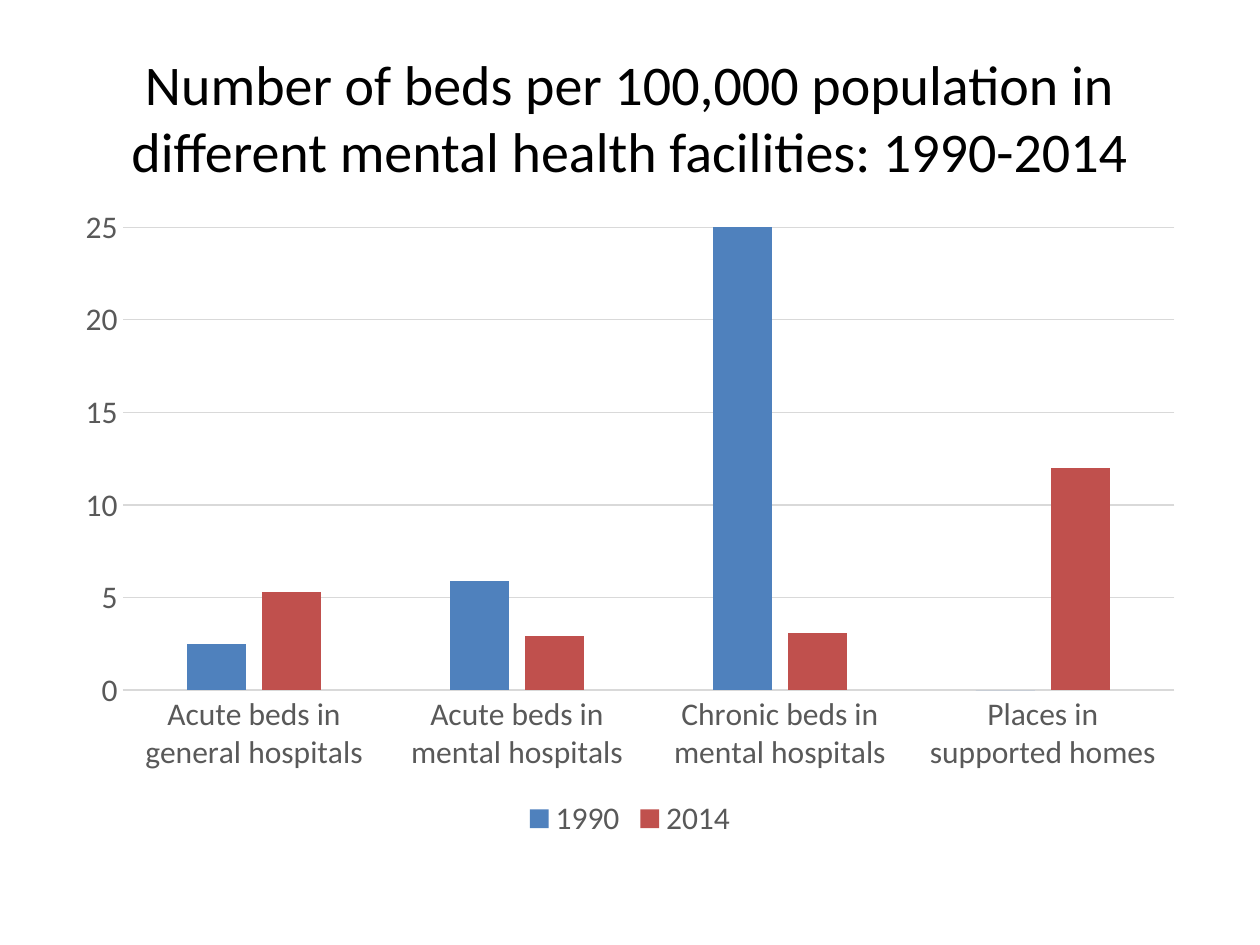
from pptx import Presentation
from pptx.chart.data import CategoryChartData
from pptx.dml.color import RGBColor
from pptx.enum.chart import XL_CHART_TYPE, XL_LEGEND_POSITION, XL_TICK_MARK
from pptx.enum.text import MSO_ANCHOR, PP_ALIGN
from pptx.util import Inches, Pt

TITLE = "Number of beds per 100,000 population in different mental health facilities: 1990-2014"
FACILITIES = ["Acute beds in general hospitals", "Acute beds in mental hospitals",
              "Chronic beds in mental hospitals", "Places in supported homes"]
BEDS = [("1990", (2.5, 5.9, 25.9, 0), "4F81BD"),
        ("2014", (5.3, 2.9, 3.1, 12), "C0504D")]
FONT, GREY, PALE = "Calibri", "595959", "D9D9D9"
W, H, MARGIN = 10, 7.5, 0.5
TITLE_TOP, TITLE_H, CHART_H = 0.3, 1.25, 5.15


def rgb(color):
    return RGBColor.from_string(color)


def style(font, size=18, color=GREY):
    font.name, font.size, font.bold = FONT, Pt(size), False
    font.color.rgb = rgb(color)


def rule(line):
    line.color.rgb = rgb(PALE)
    line.width = Pt(0.75)


def add_title(s):
    title = s.shapes.title
    title.left, title.top = Inches(MARGIN), Inches(TITLE_TOP)
    title.width, title.height = Inches(W - 2 * MARGIN), Inches(TITLE_H)
    tf = title.text_frame
    tf.word_wrap, tf.vertical_anchor = True, MSO_ANCHOR.MIDDLE
    p = tf.paragraphs[0]
    p.alignment = PP_ALIGN.CENTER
    r = p.add_run()
    r.text = TITLE
    style(r.font, 32, "000000")


def add_beds_chart(s):
    data = CategoryChartData()
    data.categories = FACILITIES
    for name, values, _ in BEDS:
        data.add_series(name, values)
    chart = s.shapes.add_chart(
        XL_CHART_TYPE.COLUMN_CLUSTERED, Inches(MARGIN), Inches(TITLE_TOP + TITLE_H),
        Inches(W - 2 * MARGIN), Inches(CHART_H), data).chart
    style(chart.font, 10, "000000")
    chart.has_title = False
    chart.has_legend = True
    chart.legend.position = XL_LEGEND_POSITION.BOTTOM
    chart.legend.include_in_layout = False
    style(chart.legend.font)

    plot = chart.plots[0]
    plot.vary_by_categories = False
    plot.gap_width, plot.overlap = 219, -27
    for series, (_, _, color) in zip(plot.series, BEDS):
        series.invert_if_negative = False
        series.format.fill.solid()
        series.format.fill.fore_color.rgb = rgb(color)

    cat, val = chart.category_axis, chart.value_axis
    for axis in (cat, val):
        axis.major_tick_mark = axis.minor_tick_mark = XL_TICK_MARK.NONE
        style(axis.tick_labels.font)
    rule(cat.format.line)
    val.format.line.fill.background()
    val.minimum_scale, val.maximum_scale, val.major_unit = 0, 25, 5
    val.has_major_gridlines = True
    rule(val.major_gridlines.format.line)


def main():
    """Build the mental health beds slide."""
    prs = Presentation()
    prs.slide_width, prs.slide_height = Inches(W), Inches(H)
    s = prs.slides.add_slide(prs.slide_layouts[5])
    add_title(s)
    add_beds_chart(s)
    prs.save("out.pptx")


if __name__ == "__main__":
    main()
